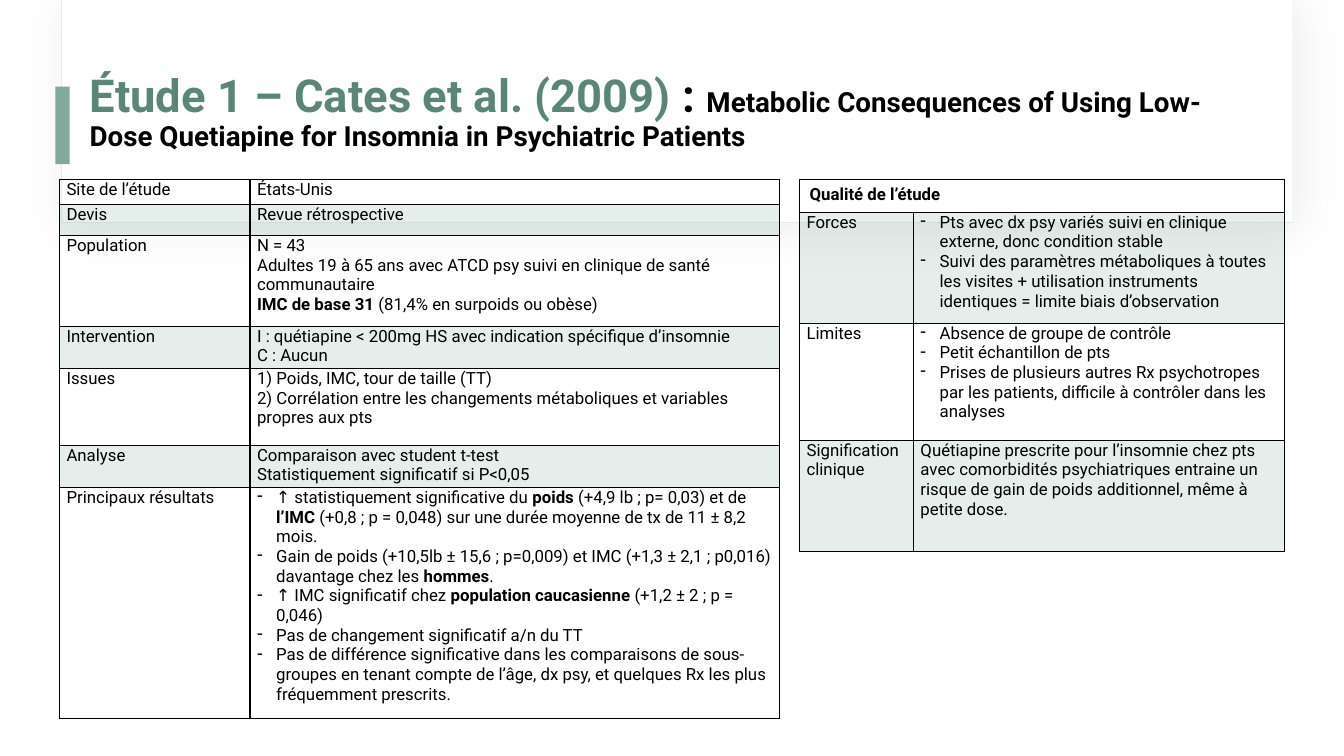
from pptx import Presentation
from pptx.dml.color import RGBColor
from pptx.enum.shapes import MSO_SHAPE
from pptx.enum.text import MSO_ANCHOR
from pptx.oxml import parse_xml
from pptx.oxml.ns import nsdecls, qn
from pptx.util import Inches, Pt

HUES = {"white": "FFFFFF", "edge": "E5EAF0", "shade": "D9D9D9",
        "sage": "81AA9C", "green": "5A8677", "black": "000000"}
FONT = "Roboto"
BODY = 12

TITLE = [
    ("Étude 1 – Cates et al. (2009) ", 32.4, "green"),
    (": ", 32.4, "black"),
    ("Metabolic Consequences of Using Low-Dose Quetiapine for Insomnia "
     "in Psychiatric Patients", 19.8, "black"),
]

STUDY = [
    ("Site de l’étude", ["États-Unis"]),
    ("Devis", ["Revue rétrospective"]),
    ("Population", [
        "N = 43",
        "Adultes 19 à 65 ans avec ATCD psy suivi en clinique de santé communautaire",
        "*IMC de base 31 *(81,4% en surpoids ou obèse)"]),
    ("Intervention", [
        "I : quétiapine < 200mg HS avec indication spécifique d’insomnie",
        "C : Aucun"]),
    ("Issues", [
        "1) Poids, IMC, tour de taille (TT)",
        "2) Corrélation entre les changements métaboliques et variables propres aux pts"]),
    ("Analyse", [
        "Comparaison avec student t-test",
        "Statistiquement significatif si P<0,05"]),
    ("Principaux résultats", [
        "- ↑ statistiquement significative du *poids* (+4,9 lb ; p= 0,03) et de "
        "*l’IMC* (+0,8 ; p = 0,048) sur une durée moyenne de tx de 11 ± 8,2 mois.",
        "- Gain de poids (+10,5lb ± 15,6 ; p=0,009) et IMC (+1,3 ± 2,1 ; p0,016) "
        "davantage chez les *hommes*.",
        "- ↑ IMC significatif chez *population caucasienne *(+1,2 ± 2 ; p = 0,046)",
        "- Pas de changement significatif a/n du TT",
        "- Pas de différence significative dans les comparaisons de sous-groupes en "
        "tenant compte de l’âge, dx psy, et quelques Rx les plus fréquemment prescrits."]),
]

MERIT = [
    ("*Qualité de l’étude*", None),
    ("Forces", [
        "- Pts avec dx psy variés suivi en clinique externe, donc condition stable",
        "- Suivi des paramètres métaboliques à toutes les visites + utilisation "
        "instruments identiques = limite biais d’observation"]),
    ("Limites", [
        "- Absence de groupe de contrôle",
        "- Petit échantillon de pts",
        "- Prises de plusieurs autres Rx psychotropes par les patients, difficile "
        "à contrôler dans les analyses"]),
    ("Signification clinique", [
        "Quétiapine prescrite pour l’insomnie chez pts avec comorbidités "
        "psychiatriques entraine un risque de gain de poids additionnel, "
        "même à petite dose."]),
]

TOP = 1.78
GRIDS = [
    (STUDY, 0.59, [1.89, 5.25], [0.25, 0.31, 0.9, 0.42, 0.76, 0.42, 2.29]),
    (MERIT, 7.93, [1.13, 3.68], [0.33, 1.1, 1.16, 1.1]),
]


def tint(name):
    return RGBColor.from_string(HUES[name])


def style(run, size, hue="black", bold=False):
    font = run.font
    font.name, font.size, font.bold = FONT, Pt(size), bold
    font.color.rgb = tint(hue)


def block(slide, box, fill, line=None):
    shape = slide.shapes.add_shape(MSO_SHAPE.RECTANGLE, *map(Inches, box))
    shape.shadow.inherit = False
    shape.fill.solid()
    shape.fill.fore_color.rgb = tint(fill)
    if line:
        shape.line.color.rgb = tint(line)
        shape.line.width = Pt(0.75)
    else:
        shape.line.fill.background()
    return shape


def shade(shape):
    glow = shape._element.spPr.find(qn("a:effectLst"))
    glow.append(parse_xml(
        f'<a:outerShdw {nsdecls("a")} blurRad="{Pt(30)}" dist="{Pt(5)}" '
        f'dir="2220000" rotWithShape="0"><a:srgbClr val="{HUES["shade"]}">'
        '<a:alpha val="45000"/></a:srgbClr></a:outerShdw>'))


def dash(para):
    props = para._p.get_or_add_pPr()
    props.set("marL", str(Inches(0.19)))
    props.set("indent", str(-Inches(0.19)))
    props.append(parse_xml(f'<a:buChar {nsdecls("a")} char="-"/>'))


def write(cell, lines):
    frame = cell.text_frame
    for i, line in enumerate(lines):
        para = frame.add_paragraph() if i else frame.paragraphs[0]
        if line.startswith("- "):
            dash(para)
        for j, part in enumerate(line.removeprefix("- ").split("*")):
            if part:
                run = para.add_run()
                run.text = part
                style(run, BODY, bold=j % 2 == 1)


def paint(cell, tinted):
    if tinted:
        cell.fill.solid()
        cell.fill.fore_color.rgb = tint("sage")
    else:
        cell.fill.background()
    props = cell._tc.get_or_add_tcPr()
    for color in props.iter(qn("a:srgbClr")):
        color.append(parse_xml(f'<a:alpha {nsdecls("a")} val="20000"/>'))
    for i, side in enumerate("LRTB"):
        props.insert(i, parse_xml(
            f'<a:ln{side} {nsdecls("a")} w="{Pt(1)}"><a:solidFill>'
            f'<a:srgbClr val="{HUES["black"]}"/></a:solidFill></a:ln{side}>'))


def grid(slide, data, left, cols, rows):
    box = map(Inches, (left, TOP, sum(cols), sum(rows)))
    table = slide.shapes.add_table(len(rows), len(cols), *box).table
    table.first_row = table.horz_banding = False
    for col, width in zip(table.columns, cols):
        col.width = Inches(width)
    for i, (label, lines) in enumerate(data):
        table.rows[i].height = Inches(rows[i])
        pair = table.rows[i].cells
        for cell, text in zip(pair, ([label], lines)):
            paint(cell, i % 2 == 1)
            if lines:
                cell.margin_left = cell.margin_right = Inches(0.07)
                cell.margin_top = cell.margin_bottom = 0
            write(cell, text or [])
        if lines is None:
            pair[0].merge(pair[1])


def head(slide):
    frame = slide.shapes.add_textbox(*map(Inches, (0.79, 0.73, 11.76, 1.29))).text_frame
    frame.word_wrap = True
    frame.vertical_anchor = MSO_ANCHOR.TOP
    frame.margin_top = 0
    para = frame.paragraphs[0]
    para.line_spacing = 0.9
    for text, size, hue in TITLE:
        run = para.add_run()
        run.text = text
        style(run, size, hue, True)


def main():
    deck = Presentation()
    deck.slide_width, deck.slide_height = Inches(13.33), Inches(7.5)
    slide = deck.slides.add_slide(deck.slide_layouts[6])
    shade(block(slide, (0.61, 0, 12.21, 2.21), "white", "edge"))
    block(slide, (0.62, 0, 12.2, 2.2), "white")
    block(slide, (0.55, 0.86, 0.14, 0.77), "sage")
    head(slide)
    for item in GRIDS:
        grid(slide, *item)
    deck.save("out.pptx")


if __name__ == "__main__":
    main()
